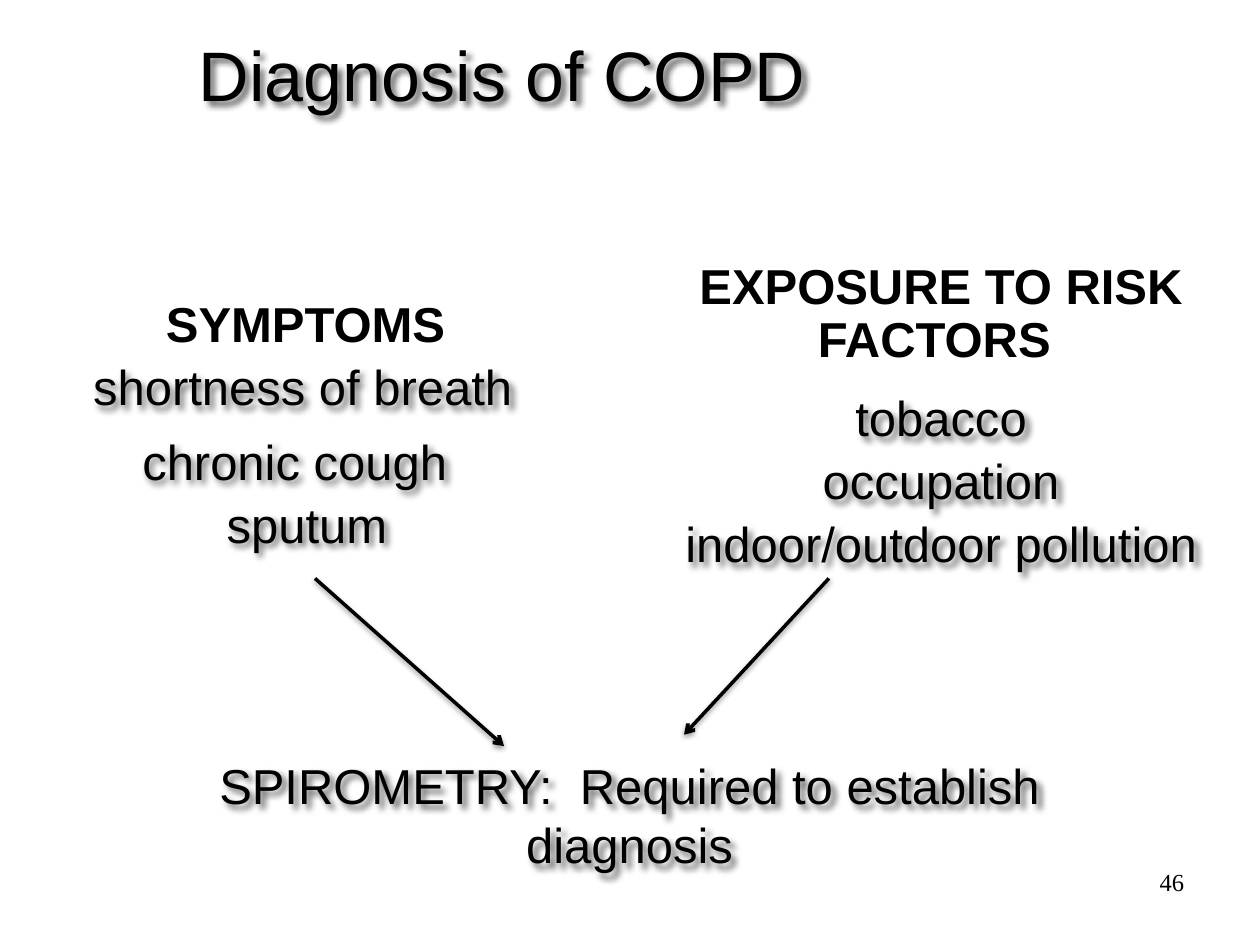
from dataclasses import dataclass

from lxml import etree
from pptx import Presentation
from pptx import util as u
from pptx.dml.color import RGBColor
from pptx.enum import shapes, text
from pptx.oxml import ns

Cm, Pt = u.Cm, u.Pt
CENTER, LEFT, RIGHT = text.PP_ALIGN.CENTER, text.PP_ALIGN.LEFT, text.PP_ALIGN.RIGHT


@dataclass(frozen=True)
class Theme:
    ink: str = "000000"
    font: str = "Arial"
    number_font: str = "Times New Roman"
    title: int = 40
    body: int = 28
    number: int = 14
    line: float = 2
    row: float = 1.27  # cm between list lines
    # blur pt, distance pt, angle, opacity %
    text_shadow: tuple = (4, 3, 45, 60)
    line_shadow: tuple = (3.1, 1.6, 90, 38)


THEME = Theme()


def add_child(parent, tag, **attributes):
    child = etree.SubElement(parent, ns.qn(tag))
    for name, value in attributes.items():
        child.set(name, str(value))
    return child


def add_shadow(shape, blur, distance, angle, opacity):
    effects = add_child(shape._element.spPr, "a:effectLst")
    shadow = add_child(effects, "a:outerShdw", blurRad=int(Pt(blur)),
                       dist=int(Pt(distance)), dir=angle * 60000,
                       algn="ctr", rotWithShape=0)
    color = add_child(shadow, "a:srgbClr", val=THEME.ink)
    add_child(color, "a:alpha", val=opacity * 1000)


def add_text(page, box, lines, size=THEME.body, font=THEME.font, bold=False,
             align=CENTER, spacing=None, shadow=True, inset=0):
    """Write the lines as paragraphs in box = (left, top, width, height) in cm."""
    shape = page.shapes.add_textbox(*map(Cm, box))
    frame = shape.text_frame
    frame.word_wrap = True
    frame.margin_left = frame.margin_right = Cm(2 * inset)
    frame.margin_top = frame.margin_bottom = Cm(inset)
    for index, line in enumerate(lines):
        para = frame.add_paragraph() if index else frame.paragraphs[0]
        para.alignment = align
        para.line_spacing = spacing
        span = para.add_run()
        span.text = line
        span.font.name = font
        span.font.size = Pt(size)
        span.font.bold = bold
        span.font.color.rgb = RGBColor.from_string(THEME.ink)
    if shadow:
        add_shadow(shape, *THEME.text_shadow)


def add_arrow(page, start, end):
    arrow = page.shapes.add_connector(shapes.MSO_CONNECTOR.STRAIGHT,
                                      *map(Cm, start + end))
    arrow.line.width = Pt(THEME.line)
    arrow.line.color.rgb = RGBColor.from_string(THEME.ink)
    add_child(arrow.line._get_or_add_ln(), "a:tailEnd", type="arrow")
    add_shadow(arrow, *THEME.line_shadow)


def add_symptoms(page, box):
    left, top, width, height = box
    add_text(page, (left, top, width, THEME.row), ["SYMPTOMS"],
             bold=True, shadow=False)
    items = [("shortness of breath", 0, THEME.row),
             ("chronic cough", 0.99, 2.77),
             ("sputum", 2.69, 2.77 + THEME.row)]
    for item, indent, drop in items:
        add_text(page, (left + indent, top + drop, width - indent, THEME.row),
                 [item], align=LEFT)


def add_risk_factors(page, box):
    left, top, width, height = box
    add_text(page, (left, top, width, 2.13), ["EXPOSURE TO RISK", "FACTORS "],
             bold=True, spacing=0.9, shadow=False)
    for row, item in enumerate(["tobacco", "occupation", "indoor/outdoor pollution"], 2):
        add_text(page, (left, top + row * THEME.row, width, THEME.row), [item])


def add_conclusion(page, box):
    left, top, width, height = box
    # Both arrows end just above the conclusion
    add_arrow(page, (left + 2.97, top - 3.58), (left + 6.78, top - 0.2))
    add_arrow(page, (left + 13.33, top - 3.58), (left + 10.41, top - 0.43))
    add_text(page, box, ["SPIROMETRY:  Required to establish diagnosis"])


def main():
    deck = Presentation()
    deck.slide_width, deck.slide_height = Cm(25.4), Cm(19.05)
    page = deck.slides.add_slide(deck.slide_layouts[6])

    add_text(page, (4.01, 0.64, 17.15, 1.7), ["Diagnosis of COPD"],
             size=THEME.title, align=LEFT)
    add_symptoms(page, (1.88, 5.92, 8.56, 5.31))
    add_risk_factors(page, (13.74, 5.28, 10.46, 6.35))
    add_conclusion(page, (3.38, 15.24, 18.62, 2.39))
    # Page number
    add_text(page, (18.21, 17.35, 5.92, 1.32), ["46"], size=THEME.number,
             font=THEME.number_font, align=RIGHT, shadow=False, inset=0.13)

    deck.save("out.pptx")


if __name__ == "__main__":
    main()
